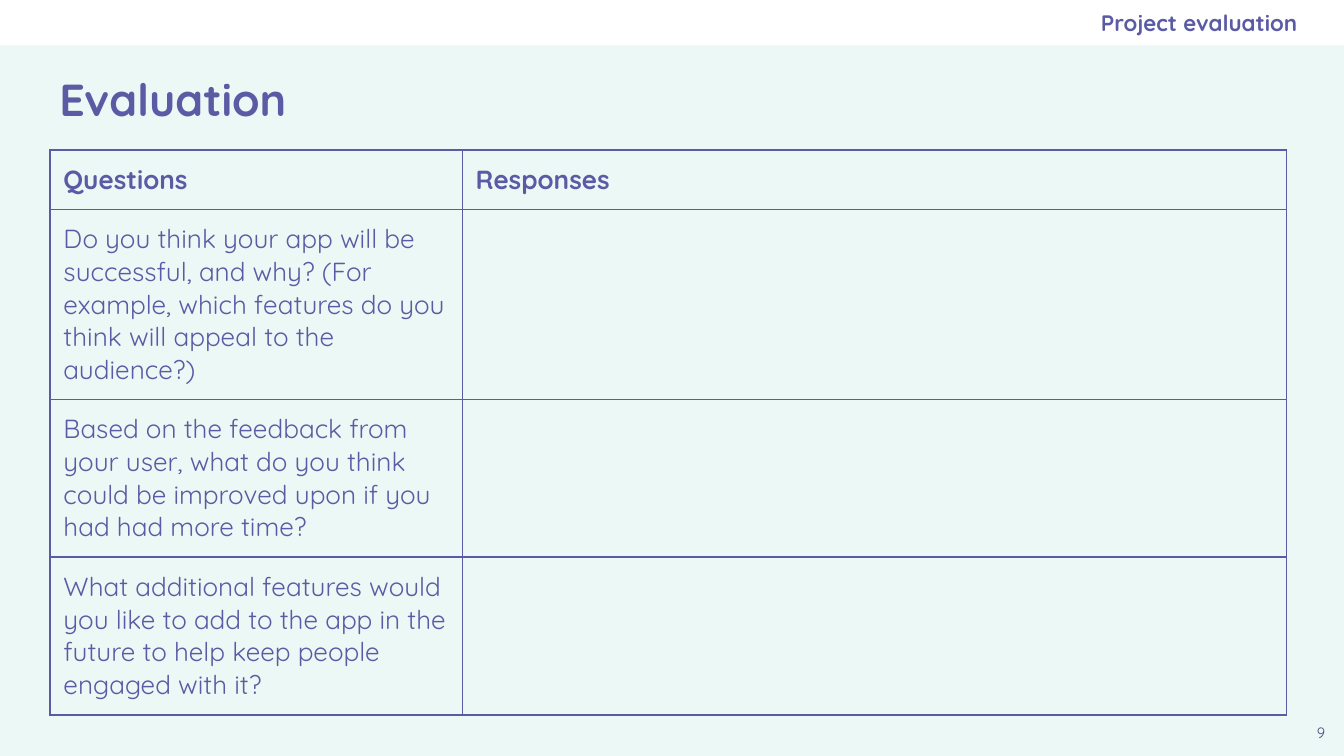
"""Build the project evaluation slide with its table of questions and responses."""
from lxml.etree import SubElement
from pptx import Presentation
from pptx.dml.color import RGBColor
from pptx.enum.shapes import MSO_SHAPE
from pptx.enum.text import MSO_ANCHOR, MSO_AUTO_SIZE, PP_ALIGN
from pptx.oxml.ns import qn
from pptx.util import Cm, Pt

TITLE = "Evaluation"
SECTION = "Project evaluation"
PAGE_NUMBER = "9"
ROWS = [
    ("Questions", "Responses"),
    ("Do you think your app will be successful, and why? (For example, which "
     "features do you think will appeal to the audience?)", ""),
    ("Based on the feedback from your user, what do you think could be improved "
     "upon if you had had more time?", ""),
    ("What additional features would you like to add to the app in the future "
     "to help keep people engaged with it?", ""),
]
COLUMN_WIDTHS = [7.79, 15.57]
ROW_HEIGHTS = [1.12, 3.59, 2.98, 2.98]

FONT = "Quicksand"
COLORS = {"background": "ECF8F5", "band": "FFFFFF", "text": "5B5BA5", "number": "494985"}
WIDTH, HEIGHT, BAND_HEIGHT = 25.4, 14.29, 0.86
NUMBER_SIZE = 0.87
MARGIN = Cm(0.25)


def color(name):
    return RGBColor.from_string(COLORS[name])


def style_text(frame, size, bold=False, align=PP_ALIGN.LEFT, ink="text"):
    for paragraph in frame.paragraphs:
        paragraph.alignment = align
        paragraph.space_before = Pt(0)
        for span in paragraph.runs:
            span.font.name = FONT
            span.font.size = Pt(size)
            span.font.bold = bold
            span.font.color.rgb = color(ink)


def set_margins(target, right=MARGIN):
    target.margin_left = target.margin_top = target.margin_bottom = MARGIN
    target.margin_right = right


def fill_box(box, area, text, size, anchor=MSO_ANCHOR.MIDDLE, right=MARGIN, **style):
    box.left, box.top, box.width, box.height = (Cm(length) for length in area)
    frame = box.text_frame
    frame.text = text
    frame.word_wrap = True
    frame.auto_size = MSO_AUTO_SIZE.NONE
    frame.vertical_anchor = anchor
    set_margins(frame, right)
    style_text(frame, size, **style)


def add_borders(cell):
    properties = cell._tc.get_or_add_tcPr()
    for position, side in enumerate(("a:lnL", "a:lnR", "a:lnT", "a:lnB")):
        line = properties.makeelement(qn(side), {"w": str(Pt(1))})
        properties.insert(position, line)
        fill = SubElement(line, qn("a:solidFill"))
        SubElement(fill, qn("a:srgbClr"), val=COLORS["text"])


def add_questions(page):
    table = page.shapes.add_table(
        len(ROWS), len(COLUMN_WIDTHS), Cm(0.95), Cm(2.84),
        Cm(sum(COLUMN_WIDTHS)), Cm(sum(ROW_HEIGHTS))).table
    table.first_row = table.horz_banding = False
    for column, width in zip(table.columns, COLUMN_WIDTHS):
        column.width = Cm(width)
    for index, (row, height, texts) in enumerate(zip(table.rows, ROW_HEIGHTS, ROWS)):
        row.height = Cm(height)
        for cell, text in zip(row.cells, texts):
            cell.text_frame.text = text
            set_margins(cell)
            cell.fill.background()
            add_borders(cell)
            style_text(cell.text_frame, 14, bold=index == 0)


def main():
    deck = Presentation()
    deck.slide_width, deck.slide_height = Cm(WIDTH), Cm(HEIGHT)
    page = deck.slides.add_slide(deck.slide_layouts[0])
    page.background.fill.solid()
    page.background.fill.fore_color.rgb = color("background")

    band = page.shapes.add_shape(MSO_SHAPE.RECTANGLE, 0, 0, Cm(WIDTH), Cm(BAND_HEIGHT))
    band.shadow.inherit = False
    band.fill.solid()
    band.fill.fore_color.rgb = color("band")
    band.line.fill.background()
    page.shapes._spTree.insert(2, band._element)

    fill_box(page.shapes.title, (0.87, 0.89, 23.66, 1.93), TITLE, 24, bold=True)
    fill_box(page.placeholders[1], (14.61, 0, 9.91, BAND_HEIGHT), SECTION, 12,
             right=0, bold=True, align=PP_ALIGN.RIGHT)
    number = page.shapes.add_textbox(0, 0, 0, 0)
    corner = (WIDTH - NUMBER_SIZE, HEIGHT - NUMBER_SIZE, NUMBER_SIZE, NUMBER_SIZE)
    fill_box(number, corner, PAGE_NUMBER, 8, anchor=MSO_ANCHOR.TOP,
             align=PP_ALIGN.CENTER, ink="number")
    add_questions(page)
    deck.save("out.pptx")


if __name__ == "__main__":
    main()
